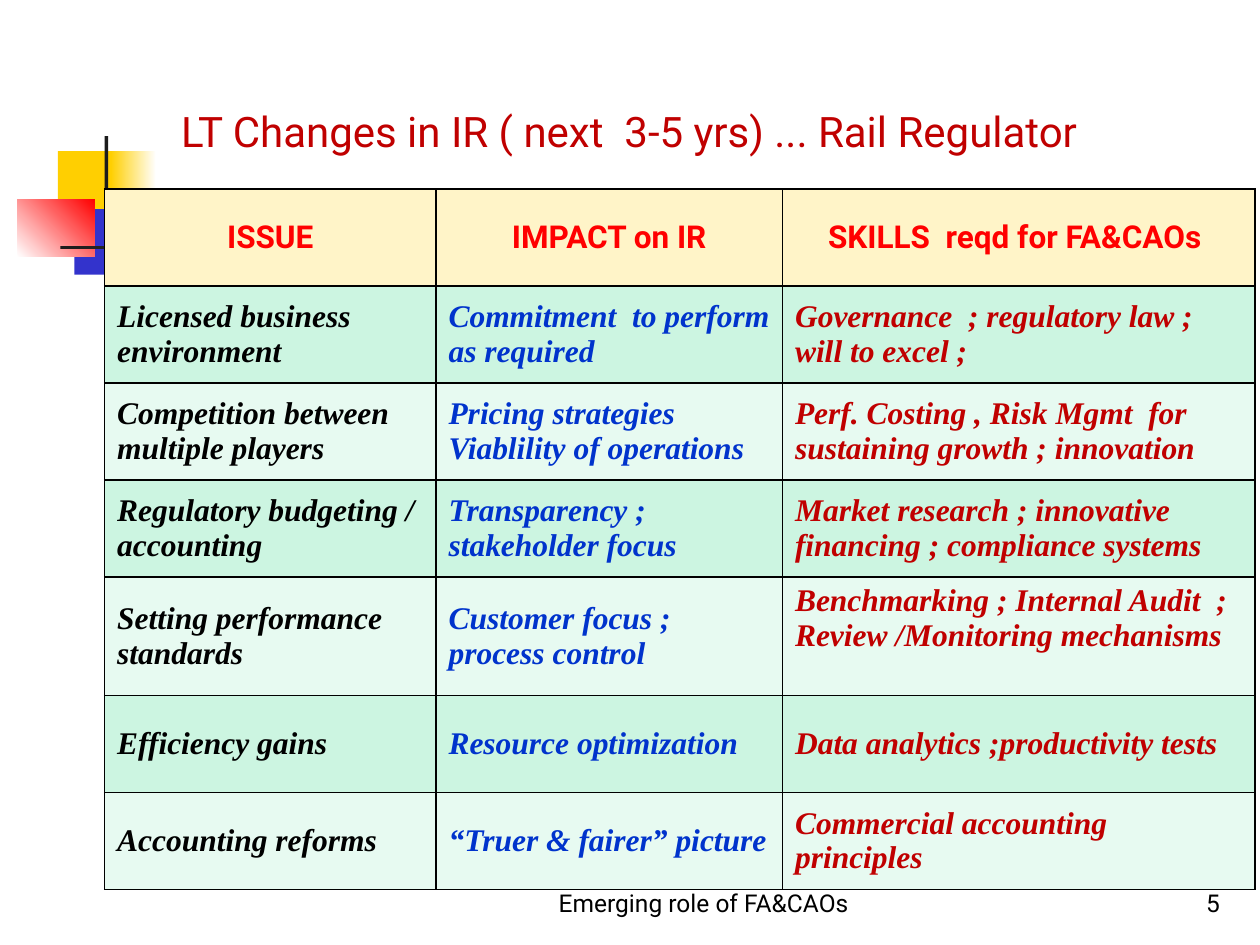
"""Build the slide on long-term changes and the rail regulator."""
from dataclasses import dataclass

from lxml.etree import SubElement
from pptx import Presentation
from pptx.dml.color import RGBColor
from pptx.enum.shapes import MSO_SHAPE
from pptx.enum.text import MSO_ANCHOR, PP_ALIGN
from pptx.oxml.ns import qn
from pptx.slide import Slide
from pptx.table import _Cell
from pptx.util import Inches, Pt

COLORS = {
    "yellow": "FFCF01", "blue": "3333CC", "red": "FF0000", "ink": "1C1C1C",
    "white": "FFFFFF", "black": "000000", "crimson": "C00000",
    "royal": "0033CC", "cream": "FFF4C8", "mint": "CCF5E1", "pale": "E7FAF1",
}
SANS, SERIF = "Roboto", "Times New Roman"
COLUMN_WIDTHS = (2.63, 2.75, 3.75)
COLUMN_COLORS = ("black", "royal", "crimson")
ROW_HEIGHT, TALL_ROW_HEIGHT, TALL_ROW = 0.77, 0.94, 4
HEADERS = ("ISSUE", "IMPACT on IR", "SKILLS  reqd for FA&CAOs ")
ISSUES = (
    ("Licensed business environment", "Commitment  to perform as required",
     "Governance  ; regulatory law ; will to excel ;"),
    ("Competition between multiple players",
     "Pricing strategies Viablility of operations",
     "Perf. Costing , Risk Mgmt  for sustaining growth ; innovation"),
    ("Regulatory budgeting / accounting", "Transparency ; stakeholder focus",
     "Market research ; innovative financing ; compliance systems"),
    ("Setting performance standards", "Customer focus ; process control",
     "Benchmarking ; Internal Audit  ; Review /Monitoring mechanisms"),
    ("Efficiency gains", "Resource optimization",
     "Data analytics ;productivity tests"),
    ("Accounting reforms", "“Truer & fairer” picture",
     "Commercial accounting principles"),
)


@dataclass(frozen=True)
class Block:
    """A decorative rectangle, plain or fading to a second colour."""
    left: float
    top: float
    width: float
    height: float
    color: str
    fade_to: str = ""
    angle: float = 0


@dataclass(frozen=True)
class Label:
    """A line of text anchored to the bottom of its box."""
    text: str
    left: float
    top: float
    width: float
    height: float
    size: int
    color: str
    align: PP_ALIGN
    bottom_margin: float = 0.05


BLOCKS = (
    Block(0.46, 1.2, 0.48, 0.52, "yellow"),
    Block(0.88, 1.2, 0.36, 0.52, "yellow", "white"),
    Block(0.59, 1.66, 0.46, 0.52, "blue"),
    Block(0.14, 1.58, 0.61, 0.46, "white", "red", 45),
    Block(0.83, 1.08, 0.03, 1.15, "ink"),
    Block(0.48, 1.95, 9, 0.03, "ink", "white"),
)
LABELS = (
    Label("LT Changes in IR ( next  3-5 yrs) ... Rail Regulator", 1.34, 0.33,
          8.24, 1.35, 24, "crimson", PP_ALIGN.LEFT, 0.44),
    Label("5", 7.7, 6.83, 2.08, 0.5, 14, "black", PP_ALIGN.RIGHT),
    Label("Emerging role of FA&CAOs", 4, 6.83, 3.17, 0.5, 14, "black",
          PP_ALIGN.CENTER),
)


def rgb(name: str) -> RGBColor:
    """Look up a named colour."""
    return RGBColor.from_string(COLORS[name])


def draw_block(page: Slide, block: Block) -> None:
    """Draw one decorative rectangle."""
    shape = page.shapes.add_shape(
        MSO_SHAPE.RECTANGLE, Inches(block.left), Inches(block.top),
        Inches(block.width), Inches(block.height))
    shape.shadow.inherit = False
    shape.line.fill.background()
    if block.fade_to:
        shape.fill.gradient()
        shape.fill.gradient_angle = block.angle
        for stop, name in zip(shape.fill.gradient_stops,
                              (block.color, block.fade_to)):
            stop.color.rgb = rgb(name)
    else:
        shape.fill.solid()
        shape.fill.fore_color.rgb = rgb(block.color)


def draw_label(page: Slide, label: Label) -> None:
    """Draw one text box."""
    box = page.shapes.add_textbox(
        Inches(label.left), Inches(label.top),
        Inches(label.width), Inches(label.height))
    frame = box.text_frame
    frame.word_wrap = True
    frame.vertical_anchor = MSO_ANCHOR.BOTTOM
    frame.margin_bottom = Inches(label.bottom_margin)
    para = frame.paragraphs[0]
    para.text = label.text
    para.alignment = label.align
    para.font.name, para.font.size = SANS, Pt(label.size)
    para.font.color.rgb = rgb(label.color)


def add_borders(cell: _Cell) -> None:
    """Give a cell thin black edges."""
    properties = cell._tc.get_or_add_tcPr()
    for side in ("a:lnL", "a:lnR", "a:lnT", "a:lnB"):
        edge = SubElement(properties, qn(side), w=str(Pt(1)))
        fill = SubElement(edge, qn("a:solidFill"))
        SubElement(fill, qn("a:srgbClr"), val=COLORS["black"])


def fill_cell(cell: _Cell, text: str, fill: str, color: str,
              header: bool) -> None:
    """Write and style one table cell."""
    add_borders(cell)
    cell.fill.solid()
    cell.fill.fore_color.rgb = rgb(fill)
    cell.vertical_anchor = MSO_ANCHOR.MIDDLE
    para = cell.text_frame.paragraphs[0]
    para.text = text
    para.alignment = PP_ALIGN.CENTER if header else PP_ALIGN.LEFT
    para.font.name = SANS if header else SERIF
    para.font.size = Pt(18)
    para.font.bold, para.font.italic = True, not header
    para.font.color.rgb = rgb(color)


def draw_table(page: Slide) -> None:
    """Draw the table of issues, impacts and skills."""
    rows = (HEADERS, *ISSUES)
    height = ROW_HEIGHT * (len(rows) - 1) + TALL_ROW_HEIGHT
    table = page.shapes.add_table(
        len(rows), len(HEADERS), Inches(0.83), Inches(1.5),
        Inches(sum(COLUMN_WIDTHS)), Inches(height)).table
    for column, width in zip(table.columns, COLUMN_WIDTHS):
        column.width = Inches(width)
    for index, texts in enumerate(rows):
        header = index == 0
        table.rows[index].height = Inches(
            TALL_ROW_HEIGHT if index == TALL_ROW else ROW_HEIGHT)
        fill = "cream" if header else ("pale", "mint")[index % 2]
        for position, text in enumerate(texts):
            color = "red" if header else COLUMN_COLORS[position]
            fill_cell(table.cell(index, position), text, fill, color, header)
    table.cell(TALL_ROW, 2).vertical_anchor = MSO_ANCHOR.TOP


def main() -> None:
    """Build and save the deck."""
    deck = Presentation()
    deck.slide_width, deck.slide_height = Inches(10), Inches(7.5)
    page = deck.slides.add_slide(deck.slide_layouts[6])
    for block in BLOCKS:
        draw_block(page, block)
    for label in LABELS:
        draw_label(page, label)
    draw_table(page)
    deck.save("out.pptx")


if __name__ == "__main__":
    main()
